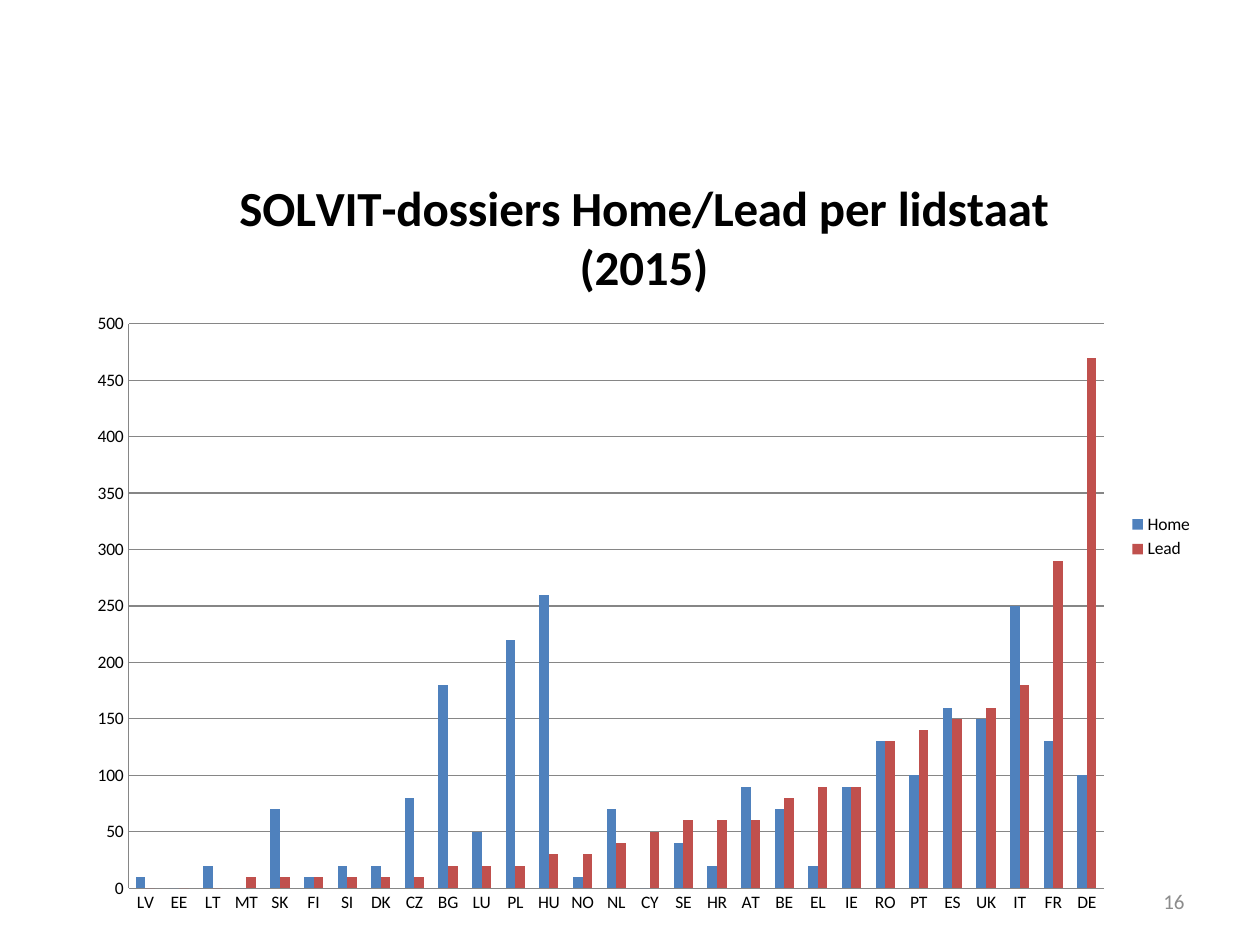
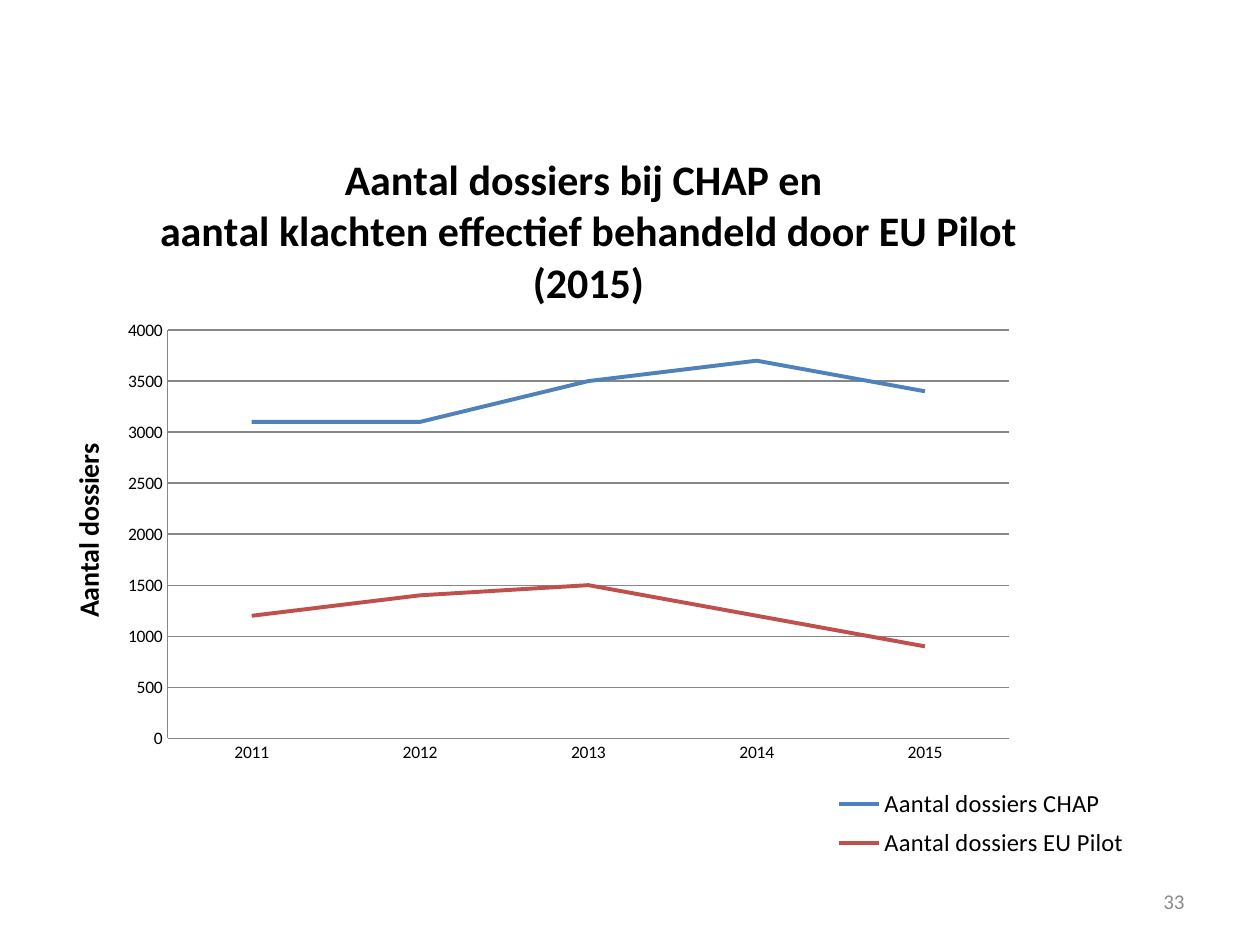
from dataclasses import dataclass
from typing import Optional

from lxml import etree
from pptx import Presentation
from pptx import util as u
from pptx.chart import data as cd
from pptx.dml import color as dc
from pptx.enum import chart as ce
from pptx.enum import text as te
from pptx.oxml import ns


@dataclass(frozen=True)
class Theme:
    font: str = "Calibri"
    ink: str = "000000"
    mute: str = "8C8C8C"
    rule: str = "868686"
    hues: tuple = ("4F81BD", "C0504D")
    small: float = 10
    foot: float = 12
    key: float = 14
    label: float = 16
    thin: float = 0.75
    thick: float = 2.25


@dataclass(frozen=True)
class Graph:
    kind: ce.XL_CHART_TYPE
    page: str
    title: tuple
    size: float
    area: tuple
    cats: tuple
    series: dict
    top: int
    step: int
    spots: dict
    key: float
    label: Optional[str] = None


T = Theme()

PLOT = "c:chart/c:plotArea"
TITLE = "c:chart/c:title"
LEGEND = "c:chart/c:legend"
LABEL = ".//c:valAx/c:title"

STATES = ("LV EE LT MT SK FI SI DK CZ BG LU PL HU NO NL CY SE HR AT "
          "BE EL IE RO PT ES UK IT FR DE")

GRAPHS = (
    Graph(
        kind=ce.XL_CHART_TYPE.COLUMN_CLUSTERED,
        page="16",
        title=("SOLVIT-dossiers Home/Lead per lidstaat (2015)",),
        size=28,
        area=(0.59, 1.15, 8.98, 6.22),
        cats=tuple(STATES.split()),
        series={
            "Home": (10, 0, 20, 0, 70, 10, 20, 20, 80, 180, 50, 220, 260, 10,
                     70, 0, 40, 20, 90, 70, 20, 90, 130, 100, 160, 150, 250,
                     130, 100),
            "Lead": (0, 0, 0, 10, 10, 10, 10, 10, 10, 20, 20, 20, 30, 30, 40,
                     50, 60, 60, 60, 80, 90, 90, 130, 140, 150, 160, 180,
                     290, 470),
        },
        top=500,
        step=50,
        spots={PLOT: (1.02, 2.57, 7.74, 4.48), TITLE: (1.83, 1.32)},
        key=T.small,
    ),
    Graph(
        kind=ce.XL_CHART_TYPE.LINE,
        page="33",
        title=("Aantal dossiers bij CHAP en ",
               "aantal klachten effectief behandeld door EU Pilot (2015)"),
        size=24,
        area=(0.2, 1.07, 9.21, 6.19),
        cats=("2011", "2012", "2013", "2014", "2015"),
        series={
            "Aantal dossiers CHAP": (3100, 3100, 3500, 3700, 3400),
            "Aantal dossiers EU Pilot": (1200, 1400, 1500, 1200, 900),
        },
        top=4000,
        step=500,
        spots={
            PLOT: (1.33, 2.62, 6.68, 3.24),
            TITLE: (1.24, 1.19),
            LEGEND: (6.5, 6.19, 2.58, 0.69),
            LABEL: (0.51, 3.48),
        },
        key=T.key,
        label="Aantal dossiers",
    ),
)


def style(font, size: float, bold: bool = False, color: str = T.ink) -> None:
    font.name = T.font
    font.size = u.Pt(size)
    font.bold = bold
    font.color.rgb = dc.RGBColor.from_string(color)


def write(frame, *lines: str, size: float, bold: bool = False,
          color: str = T.ink, align=te.PP_ALIGN.CENTER) -> None:
    for i, line in enumerate(lines):
        para = frame.add_paragraph() if i else frame.paragraphs[0]
        para.alignment = align
        run = para.add_run()
        run.text = line
        style(run.font, size, bold, color)


def stroke(line, color: str, width: float) -> None:
    line.color.rgb = dc.RGBColor.from_string(color)
    line.width = u.Pt(width)


def place(chart, where: str, spot: tuple, area: tuple) -> None:
    host = chart._chartSpace.xpath(where)[0]
    for old in host.findall(ns.qn("c:layout")):
        host.remove(old)
    box = etree.Element(ns.qn("c:layout"))
    man = etree.SubElement(box, ns.qn("c:manualLayout"))
    left, top, width, height = area
    shift = (left, top, 0, 0)
    span = (width, height, width, height)
    parts = [round((n - s) / w, 4) for n, s, w in zip(spot, shift, span)]
    pairs = [("xMode", "edge"), ("yMode", "edge"), *zip("xywh", parts)]
    if where == PLOT:
        pairs.insert(0, ("layoutTarget", "inner"))
    for tag, val in pairs:
        etree.SubElement(man, ns.qn(f"c:{tag}")).set("val", str(val))
    over = host.find(ns.qn("c:overlay"))
    if over is None:
        host.insert(0, box)
    else:
        over.addprevious(box)


def axes(chart, graph: Graph) -> None:
    side = chart.value_axis
    side.minimum_scale = 0
    side.maximum_scale = graph.top
    side.major_unit = graph.step
    side.has_major_gridlines = True
    stroke(side.major_gridlines.format.line, T.rule, T.thin)
    for axis in (side, chart.category_axis):
        axis.major_tick_mark = ce.XL_TICK_MARK.NONE
        axis.minor_tick_mark = ce.XL_TICK_MARK.NONE
        stroke(axis.format.line, T.rule, T.thin)
        style(axis.tick_labels.font, T.small)
    if graph.label:
        write(side.axis_title.text_frame, graph.label,
              size=T.label, bold=True)


def paint(chart, graph: Graph) -> None:
    plot = chart.plots[0]
    plot.vary_by_categories = False
    bars = graph.kind == ce.XL_CHART_TYPE.COLUMN_CLUSTERED
    if bars:
        plot.gap_width = 150
        plot.overlap = 0
    for item, hue in zip(plot.series, T.hues):
        if bars:
            item.format.fill.solid()
            item.format.fill.fore_color.rgb = dc.RGBColor.from_string(hue)
        else:
            item.smooth = False
            stroke(item.format.line, hue, T.thick)


def draw(slide, graph: Graph) -> None:
    data = cd.CategoryChartData(number_format="General")
    data.categories = graph.cats
    for name, vals in graph.series.items():
        data.add_series(name, vals)
    area = [u.Inches(n) for n in graph.area]
    chart = slide.shapes.add_chart(graph.kind, *area, data).chart
    style(chart.font, T.small)
    chart.has_title = True
    write(chart.chart_title.text_frame, *graph.title,
          size=graph.size, bold=True)
    chart.has_legend = True
    chart.legend.position = ce.XL_LEGEND_POSITION.RIGHT
    chart.legend.include_in_layout = False
    style(chart.legend.font, graph.key)
    axes(chart, graph)
    paint(chart, graph)
    for where, spot in graph.spots.items():
        place(chart, where, spot, graph.area)


def number(slide, page: str) -> None:
    box = slide.shapes.add_textbox(u.Inches(7.17), u.Inches(6.95),
                                   u.Inches(2.33), u.Inches(0.4))
    frame = box.text_frame
    frame.word_wrap = True
    frame.vertical_anchor = te.MSO_ANCHOR.MIDDLE
    write(frame, page, size=T.foot, color=T.mute, align=te.PP_ALIGN.RIGHT)


def main() -> None:
    deck = Presentation()
    deck.slide_width = u.Inches(10)
    deck.slide_height = u.Inches(7.5)
    for graph in GRAPHS:
        slide = deck.slides.add_slide(deck.slide_layouts[6])
        number(slide, graph.page)
        draw(slide, graph)
    deck.save("out.pptx")


if __name__ == "__main__":
    main()
